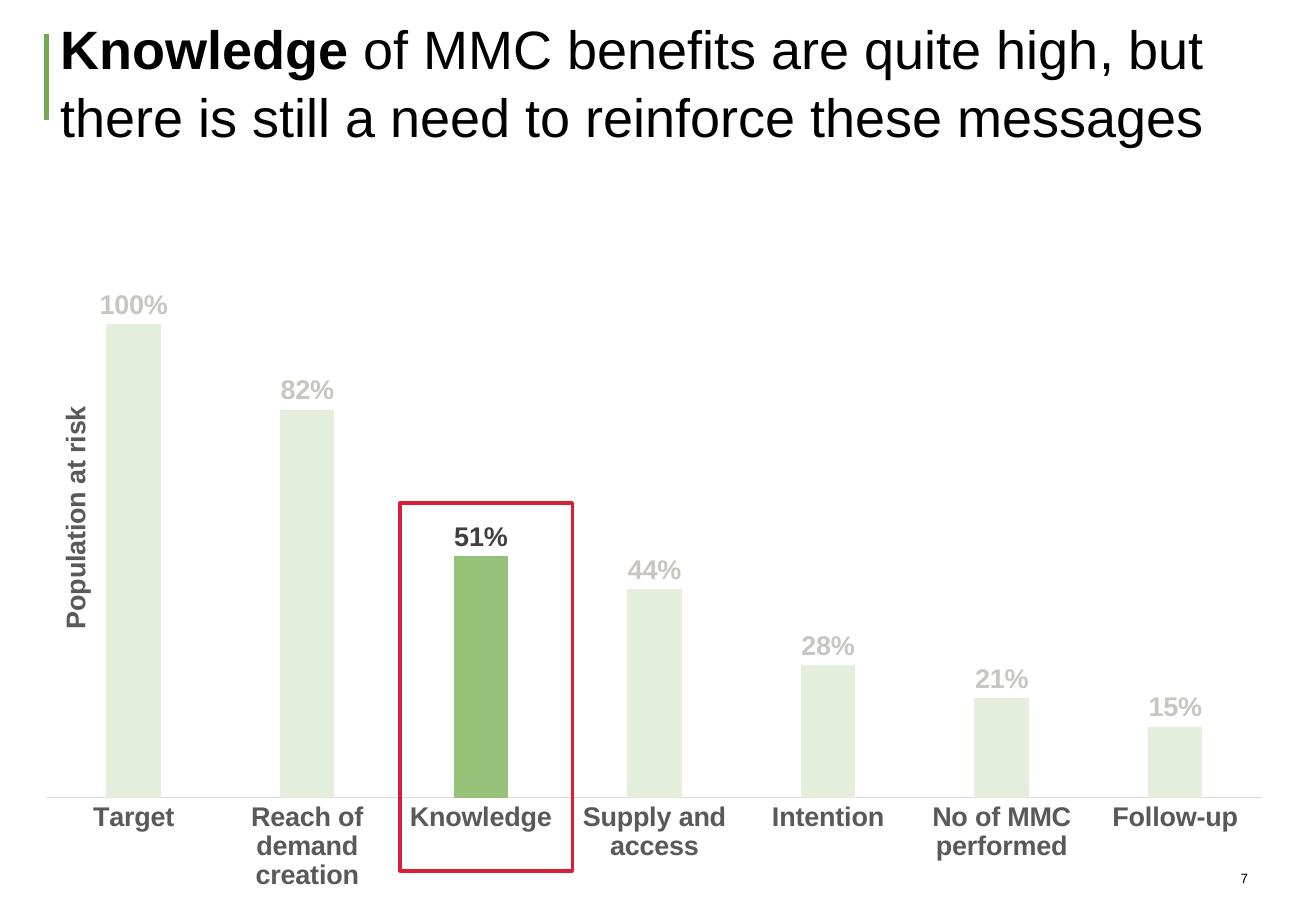
"""Build the slide on the steps of the MMC cascade, with Knowledge highlighted."""
from dataclasses import dataclass

import lxml.etree
import pptx
import pptx.chart.data
import pptx.dml.color
import pptx.enum.chart
import pptx.enum.shapes
import pptx.enum.text
import pptx.oxml
import pptx.oxml.ns
import pptx.util

Inches = pptx.util.Inches
Pt = pptx.util.Pt
qn = pptx.oxml.ns.qn


@dataclass(frozen=True)
class Theme:
    font: str = "Arial"
    title_size: int = 32
    chart_size: int = 16
    number_size: int = 8
    black: str = "000000"
    axis_text: str = "595959"
    axis_line: str = "D9D9D9"
    label: str = "404040"
    faded_label: str = "C9C5C0"
    bar: str = "96C179"
    faded_bar: str = "E3EEDB"
    accent: str = "72A84E"
    frame: str = "DC1E35"


THEME = Theme()
HIGHLIGHT = "Knowledge"
STEPS = {
    "Target": 1,
    "Reach of demand creation": 0.82,
    HIGHLIGHT: 0.51,
    "Supply and access": 0.44,
    "Intention": 0.28,
    "No of MMC performed": 0.21,
    "Follow-up": 0.15,
}


def rgb(color):
    return pptx.dml.color.RGBColor.from_string(color)


def style_font(font, size, color, bold=False):
    font.name = THEME.font
    font.size = Pt(size)
    font.bold = bold
    font.color.rgb = rgb(color)


def add_text(slide, box, runs, size, anchor, margins=(0, 0), spacing=1.0):
    """Add a wrapped text box whose runs are (text, bold) pairs."""
    tf = slide.shapes.add_textbox(*map(Inches, box)).text_frame
    tf.word_wrap = True
    tf.vertical_anchor = anchor
    tf.margin_left = tf.margin_right = Inches(margins[0])
    tf.margin_top = tf.margin_bottom = Inches(margins[1])
    p = tf.paragraphs[0]
    p.line_spacing = spacing
    for text, bold in runs:
        r = p.add_run()
        r.text = text
        style_font(r.font, size, THEME.black, bold)


def add_rule(slide, x, top, bottom):
    line = slide.shapes.add_connector(
        pptx.enum.shapes.MSO_CONNECTOR.STRAIGHT,
        Inches(x), Inches(top), Inches(x), Inches(bottom))
    line.line.color.rgb = rgb(THEME.accent)
    line.line.width = Pt(3)
    lxml.etree.SubElement(line._element.spPr, qn("a:effectLst"))


def add_frame(slide, box):
    sp = slide.shapes.add_shape(
        pptx.enum.shapes.MSO_SHAPE.RECTANGLE, *map(Inches, box))
    sp.shadow.inherit = False
    sp.fill.background()
    sp.line.color.rgb = rgb(THEME.frame)
    sp.line.width = Pt(2)


def chart_layout(**values):
    """Return a manual chart layout element with the given settings."""
    layout = lxml.etree.Element(qn("c:layout"))
    manual = lxml.etree.SubElement(layout, qn("c:manualLayout"))
    for name, value in values.items():
        lxml.etree.SubElement(manual, qn(f"c:{name}")).set("val", str(value))
    return layout


def replace_layout(parent, layout, index):
    for old in parent.findall(qn("c:layout")):
        parent.remove(old)
    parent.insert(index, layout)


def style_axes(chart):
    cat = chart.category_axis
    cat.major_tick_mark = pptx.enum.chart.XL_TICK_MARK.NONE
    cat.format.line.color.rgb = rgb(THEME.axis_line)
    cat.format.line.width = Pt(0.75)
    style_font(cat.tick_labels.font, THEME.chart_size, THEME.axis_text, True)

    val = chart.value_axis
    val.visible = False
    val.has_major_gridlines = False
    val.minimum_scale, val.maximum_scale, val.major_unit = 0, 1.2, 0.2
    val.has_title = True
    tf = val.axis_title.text_frame
    r = tf.paragraphs[0].add_run()
    r.text = "Population at risk"
    style_font(r.font, THEME.chart_size, THEME.axis_text, True)
    tf._txBody.find(qn("a:bodyPr")).set("rot", "-5400000")
    replace_layout(val.axis_title._element, chart_layout(
        xMode="edge", yMode="edge", x=0.04, y=0.27), 1)


def style_bars(plot):
    plot.gap_width, plot.overlap = 219, -27
    plot.vary_by_categories = False
    outside = pptx.enum.chart.XL_LABEL_POSITION.OUTSIDE_END
    series = plot.series[0]
    series.format.fill.solid()
    series.format.fill.fore_color.rgb = rgb(THEME.bar)
    labels = series.data_labels
    labels.show_value = True
    labels.position = outside
    labels.number_format = "0%"
    labels.number_format_is_linked = False
    style_font(labels.font, THEME.chart_size, THEME.label, True)
    for i, step in enumerate(STEPS):
        if step == HIGHLIGHT:
            continue
        point = series.points[i]
        point.format.fill.solid()
        point.format.fill.fore_color.rgb = rgb(THEME.faded_bar)
        style_font(point.data_label.font, THEME.chart_size,
                   THEME.faded_label, True)
        point.data_label.position = outside


def add_cascade(slide, box):
    data = pptx.chart.data.CategoryChartData(number_format="0%")
    data.categories = list(STEPS)
    data.add_series("Series 1", list(STEPS.values()))
    chart = slide.shapes.add_chart(
        pptx.enum.chart.XL_CHART_TYPE.COLUMN_CLUSTERED,
        *map(Inches, box), data).chart
    chart.has_legend = False
    chart.has_title = False
    style_font(chart.font, THEME.chart_size, THEME.black)
    style_axes(chart)
    style_bars(chart.plots[0])
    replace_layout(chart._chartSpace.chart.plotArea, chart_layout(
        layoutTarget="inner", xMode="edge", yMode="edge",
        x=0.035, y=0.038, w=0.957, h=0.768), 0)


def main():
    prs = pptx.Presentation()
    prs.slide_width, prs.slide_height = Inches(10.83), Inches(7.5)
    slide = prs.slides.add_slide(prs.slide_layouts[6])
    anchor = pptx.enum.text.MSO_ANCHOR
    add_rule(slide, 0.38, 0.28, 0.99)
    add_text(slide, (10.21, 7.17, 0.58, 0.13), [("7", False)],
             THEME.number_size, anchor.BOTTOM)
    add_text(slide, (0.4, 0.31, 10.05, 0.7),
             [(HIGHLIGHT, True),
              (" of MMC benefits are quite high, but there is still a need "
               "to reinforce these messages", False)],
             THEME.title_size, anchor.MIDDLE, (0.1, 0.05), 1.05)
    add_cascade(slide, (0.02, 1.66, 10.45, 6.09))
    add_frame(slide, (3.29, 4.14, 1.42, 3.03))
    prs.save("out.pptx")


if __name__ == "__main__":
    main()
